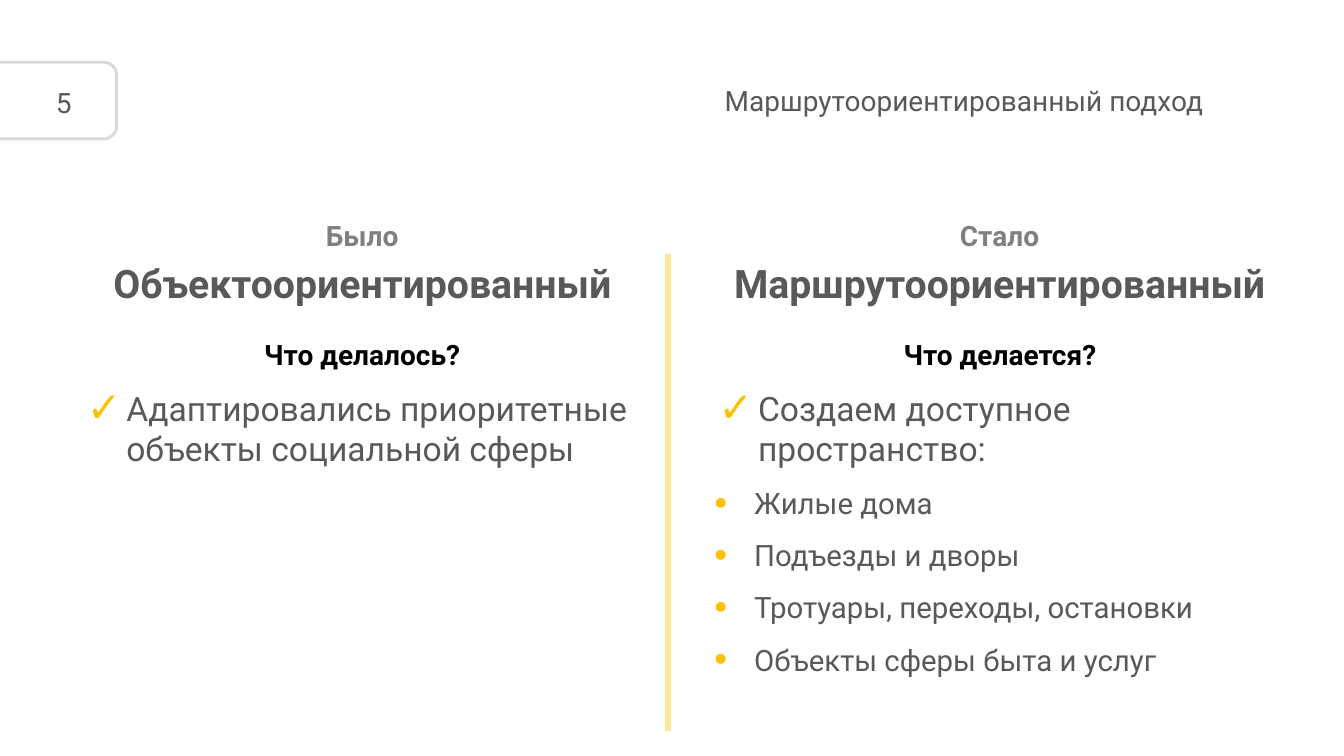
from dataclasses import dataclass

from lxml.etree import SubElement
from pptx import Presentation
from pptx.dml.color import RGBColor
from pptx.enum.shapes import MSO_CONNECTOR, MSO_SHAPE
from pptx.enum.text import MSO_ANCHOR, MSO_AUTO_SIZE, PP_ALIGN
from pptx.oxml.ns import qn
from pptx.util import Cm, Pt

TITLE = "Маршрутоориентированный подход"
PAGE_NUMBER = "5"
COLUMNS = [
    {
        "era": "Было",
        "approach": "Объектоориентированный",
        "question": "Что делалось?",
        "answer": "Адаптировались приоритетные объекты социальной сферы",
        "details": [],
        "heading_left": 2.13,
        "list_box": (1.93, 8.38, 14.4, 4.57),
        "answer_margins": (1, 0),
        "placeholders": (1, 2),
    },
    {
        "era": "Стало",
        "approach": "Маршрутоориентированный",
        "question": "Что делается?",
        "answer": "Создаем доступное пространство:",
        "details": ["Жилые дома", "Подъезды и дворы", "Тротуары, переходы, остановки",
                    "Объекты сферы быта и услуг"],
        "heading_left": 18.19,
        "list_box": (17.25, 8.38, 15.9, 8.79),
        "answer_margins": (1.6, 0.5),
        "placeholders": (3, 4),
    },
]


@dataclass(frozen=True)
class Theme:
    """Colours, font and type sizes of the slide."""
    font: str = "Roboto"
    text: str = "595959"
    muted: str = "808080"
    strong: str = "000000"
    accent: str = "FFC000"
    divider: str = "FFE699"
    border: str = "D9D9D9"
    paper: str = "FFFFFF"
    label_size: float = 20
    approach_size: float = 28
    answer_size: float = 24
    detail_size: float = 21


THEME = Theme()


def color(value):
    """Return the colour for a hex value."""
    return RGBColor.from_string(value)


def place(shape, left, top, width, height):
    """Move and size a shape in centimetres."""
    shape.left, shape.top, shape.width, shape.height = map(Cm, (left, top, width, height))


def prepare(shape, anchor=MSO_ANCHOR.TOP):
    """Fix the wrapping and anchoring of a text frame."""
    frame = shape.text_frame
    frame.word_wrap = True
    frame.auto_size = MSO_AUTO_SIZE.NONE
    frame.vertical_anchor = anchor
    return frame


def style(paragraph, size, hue, bold=False, align=PP_ALIGN.CENTER, spacing=1.0, before=0):
    """Format a paragraph and its runs."""
    paragraph.alignment = align
    paragraph.line_spacing = spacing
    paragraph.space_before = Pt(before)
    for run in paragraph.runs:
        run.font.name = THEME.font
        run.font.size = Pt(size)
        run.font.bold = bold
        run.font.color.rgb = color(hue)


def set_bullet(paragraph, character=None, left=0, right=0):
    """Give a paragraph a hanging bullet, or none."""
    properties = paragraph._p.get_or_add_pPr()
    properties.set("marL", str(Cm(left)))
    properties.set("marR", str(Cm(right)))
    properties.set("indent", str(Cm(-1 if character else 0)))
    if character is None:
        SubElement(properties, qn("a:buNone"))
        return
    bullet_color = SubElement(properties, qn("a:buClr"))
    SubElement(bullet_color, qn("a:srgbClr"), val=THEME.accent)
    SubElement(properties, qn("a:buSzPct"), val="125000")
    SubElement(properties, qn("a:buFont"), typeface="Arial")
    SubElement(properties, qn("a:buChar"), char=character)


def add_label(slide, text, box, hue, bold=False, anchor=MSO_ANCHOR.TOP, spacing=1.0):
    """Add a centred text box."""
    label = slide.shapes.add_textbox(*map(Cm, box))
    frame = prepare(label, anchor)
    frame.text = text
    style(frame.paragraphs[0], THEME.label_size, hue, bold, spacing=spacing)


def add_badge(slide):
    """Add the page number in its rounded frame."""
    badge = slide.shapes.add_shape(MSO_SHAPE.ROUNDED_RECTANGLE,
                                   *map(Cm, (-1.12, 1.57, 4.06, 1.93)))
    badge.shadow.inherit = False
    badge.fill.solid()
    badge.fill.fore_color.rgb = color(THEME.paper)
    badge.line.color.rgb = color(THEME.border)
    badge.line.width = Pt(2)
    add_label(slide, PAGE_NUMBER, (0.64, 1.57, 1.93, 1.93), THEME.text,
              anchor=MSO_ANCHOR.MIDDLE, spacing=1.1)


def add_divider(slide):
    """Add the line between the columns."""
    divider = slide.shapes.add_connector(MSO_CONNECTOR.STRAIGHT,
                                         *map(Cm, (16.83, 6.4, 16.83, 18.42)))
    divider.line.color.rgb = color(THEME.divider)
    divider.line.width = Pt(4.5)
    SubElement(divider._element.spPr, qn("a:effectLst"))


def fill_column(slide, placeholders, column):
    """Fill one side of the comparison."""
    heading, listing = (placeholders[index] for index in column["placeholders"])
    left = column["heading_left"]
    add_label(slide, column["era"], (left, 5.38, 14, 1.09), THEME.muted, bold=True)

    place(heading, left, 6.73, 14, 1.9)
    frame = prepare(heading)
    frame.text = column["approach"]
    style(frame.paragraphs[0], THEME.approach_size, THEME.text, bold=True, spacing=0.7)

    place(listing, *column["list_box"])
    frame = prepare(listing)
    frame.text = "\n".join([column["question"], column["answer"], *column["details"]])
    question, answer, *details = frame.paragraphs
    style(question, THEME.label_size, THEME.strong, bold=True, before=12)
    set_bullet(question)
    style(answer, THEME.answer_size, THEME.text, align=PP_ALIGN.LEFT, before=12)
    set_bullet(answer, "✓", *column["answer_margins"])
    for detail in details:
        style(detail, THEME.detail_size, THEME.text, align=PP_ALIGN.LEFT, before=12)
        set_bullet(detail, "•", 1.5)


def main():
    """Build the comparison slide."""
    presentation = Presentation()
    presentation.slide_width, presentation.slide_height = Cm(33.87), Cm(19.05)
    slide = presentation.slides.add_slide(presentation.slide_layouts.get_by_name("Comparison"))
    placeholders = {shape.placeholder_format.idx: shape for shape in slide.placeholders}

    title = slide.shapes.title
    place(title, 4.09, 0.53, 26.49, 4.01)
    frame = prepare(title, MSO_ANCHOR.MIDDLE)
    frame.text = TITLE
    style(frame.paragraphs[0], THEME.label_size, THEME.text, align=PP_ALIGN.RIGHT)

    add_badge(slide)
    add_divider(slide)
    for column in COLUMNS:
        fill_column(slide, placeholders, column)
    presentation.save("out.pptx")


if __name__ == "__main__":
    main()
